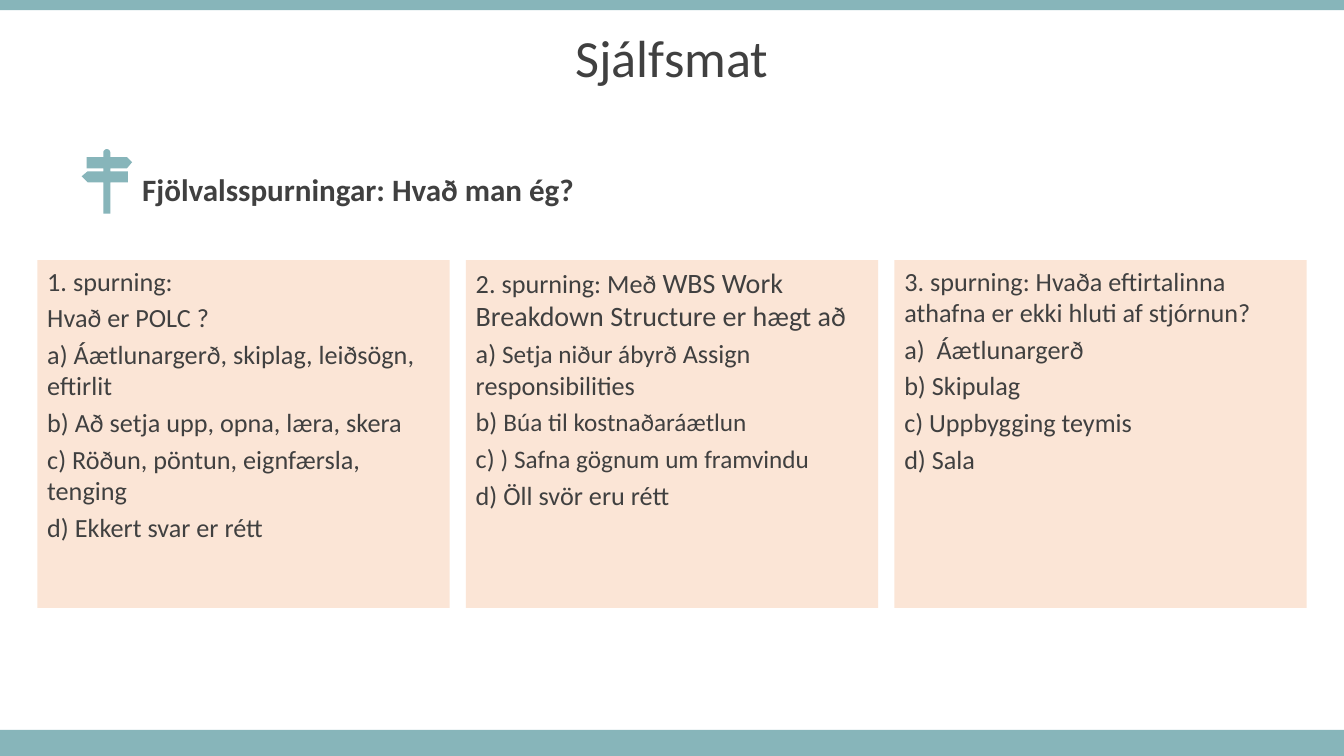
from math import cos, pi, sin

from lxml import etree
from pptx import Presentation
from pptx.dml.color import RGBColor
from pptx.enum.shapes import MSO_SHAPE
from pptx.enum.text import MSO_ANCHOR, MSO_AUTO_SIZE, PP_ALIGN
from pptx.oxml.ns import qn
from pptx.util import Inches, Pt

RECT = MSO_SHAPE.RECTANGLE
TOP, MIDDLE = MSO_ANCHOR.TOP, MSO_ANCHOR.MIDDLE
LEFT, CENTER = PP_ALIGN.LEFT, PP_ALIGN.CENTER
NO_FIT = MSO_AUTO_SIZE.NONE

FONT = "Calibri"
COLORS = {"teal": "87B5BA", "peach": "FBE5D6", "text": "404040"}
BASE, SMALL, LARGE = 18.7, 18, 20

# Each card is a list of paragraphs, each paragraph a list of (text, size)
CARDS = [
    [
        [("1. spurning:", BASE)],
        [("Hvað er POLC ?", BASE)],
        [("a) Áætlunargerð, skiplag, leiðsögn, eftirlit", BASE)],
        [("b) Að setja upp, opna, læra, skera", BASE)],
        [("c) Röðun, pöntun, eignfærsla, tenging", BASE)],
        [("d) Ekkert svar er rétt", BASE)],
    ],
    [
        [("2. spurning: Með ", BASE),
         ("WBS Work Breakdown Structure er hægt að", LARGE)],
        [("a) ", BASE), ("Setja niður ábyrð ", SMALL),
         ("Assign responsibilities", BASE)],
        [("b) ", BASE), ("Búa til kostnaðaráætlun", SMALL)],
        [("c) ", BASE), (") Safna gögnum um framvindu", SMALL)],
        [("d) Öll svör eru rétt", BASE)],
    ],
    [
        [("3. spurning: Hvaða eftirtalinna athafna er ekki hluti af stjórnun?",
          BASE)],
        [("a)  Áætlunargerð", BASE)],
        [("b) Skipulag", BASE)],
        [("c) Uppbygging teymis", BASE)],
        [("d) Sala", BASE)],
    ],
]


def color(name):
    return RGBColor.from_string(COLORS[name])


def paint(shape, fill):
    shape.fill.solid()
    shape.fill.fore_color.rgb = color(fill)
    shape.line.fill.background()
    shape.shadow.inherit = False


def add_run(para, text, size, bold=False):
    run = para.add_run()
    run.text = text
    font = run.font
    font.name, font.size, font.bold = FONT, Pt(size), bold
    font.color.rgb = color("text")


def add_box(slide, box, fill):
    shape = slide.shapes.add_shape(RECT, *map(Inches, box))
    paint(shape, fill)
    return shape


def set_head(holder, box, text, size, align, spacing, bold=False):
    """Move a placeholder and give it one line without a bullet."""
    holder.left, holder.top, holder.width, holder.height = map(Inches, box)
    frame = holder.text_frame
    frame.word_wrap = True
    frame.auto_size = NO_FIT
    frame.vertical_anchor = MIDDLE
    para = frame.paragraphs[0]
    para.alignment = align
    para.line_spacing = spacing
    para.space_before = Pt(10)
    props = para._p.get_or_add_pPr()
    props.set("marL", "0")
    props.set("indent", "0")
    etree.SubElement(props, qn("a:buNone"))
    add_run(para, text, size, bold)


def add_card(slide, box, paras):
    frame = add_box(slide, box, "peach").text_frame
    frame.word_wrap = True
    frame.vertical_anchor = TOP
    for i, runs in enumerate(paras):
        para = frame.add_paragraph() if i else frame.paragraphs[0]
        para.alignment = LEFT
        para.space_before = Pt(3.75)
        for text, size in runs:
            add_run(para, text, size)


def add_sign(slide):
    """Signpost: round-topped pole with one board each way."""
    mid, half, top = 1.06, 0.035, 1.48
    left, right = mid - half, mid + half
    steps = 12
    cap = [(mid - half * cos(pi * i / steps),
            top + half - half * sin(pi * i / steps))
           for i in range(steps + 1)]
    points = cap + [
        (right, 1.56), (1.26, 1.56), (1.31, 1.61), (1.26, 1.67),
        (right, 1.67), (right, 1.7), (1.27, 1.7), (1.27, 1.81),
        (right, 1.81), (right, 2.12), (left, 2.12), (left, 1.81),
        (0.87, 1.81), (0.81, 1.75), (0.87, 1.7), (left, 1.7),
        (left, 1.67), (0.86, 1.67), (0.86, 1.56), (left, 1.56),
    ]
    path = [(Inches(x), Inches(y)) for x, y in points]
    pen = slide.shapes.build_freeform(*path[0])
    pen.add_line_segments(path[1:], close=True)
    paint(pen.convert_to_shape(), "teal")


def main():
    deck = Presentation()
    deck.slide_width, deck.slide_height = Inches(13.33), Inches(7.5)
    slide = deck.slides.add_slide(deck.slide_layouts[1])

    # Bands
    add_box(slide, (0, 7.24, 13.33, 0.26), "teal")
    add_box(slide, (0, 0, 13.33, 0.1), "teal")

    # Headings
    title, body = slide.placeholders
    set_head(title, (0, 0.18, 13.33, 0.84), "Sjálfsmat", 37.3, CENTER, 0.9)
    set_head(body, (1.31, 1.71, 8.92, 0.41),
             "Fjölvalsspurningar: Hvað man ég?", 22.2, LEFT, 0.8, True)
    add_sign(slide)

    # Question cards
    width, gap = 4.09, 0.16
    for i, paras in enumerate(CARDS):
        add_card(slide, (0.37 + i * (width + gap), 2.58, width, 3.45), paras)

    deck.save("out.pptx")


if __name__ == "__main__":
    main()
